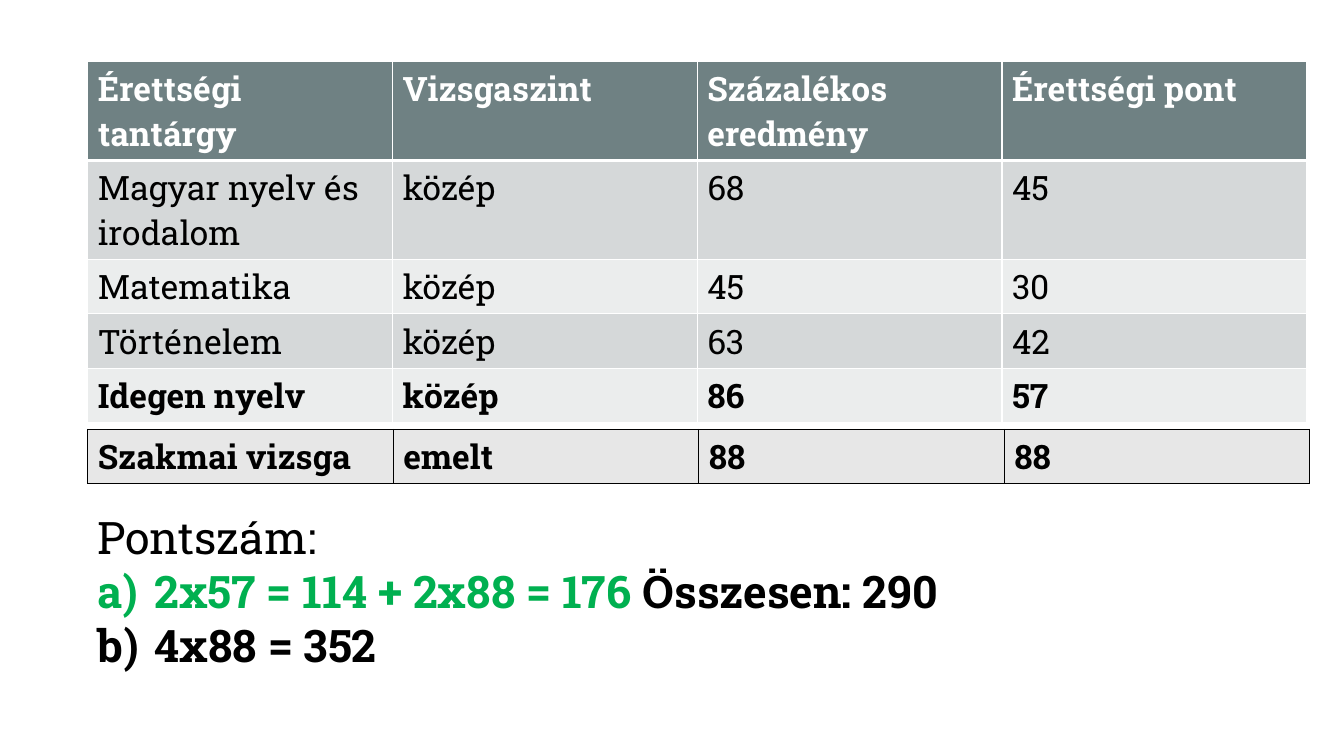
import pptx
import pptx.dml.color
import pptx.enum.text
import pptx.oxml
import pptx.oxml.ns
import pptx.util
from pptx.util import Cm

FONT = "Roboto Slab"
BLACK, WHITE, GREEN = "000000", "FFFFFF", "00B050"
HEADER_FILL, DARK_BAND, LIGHT_BAND, EXAM_FILL = "6F8183", "D5D8D9", "EBEDED", "E7E7E7"
LEFT = Cm(2.21)

SUBJECTS = [
    ("Érettségi tantárgy", "Vizsgaszint", "Százalékos eredmény", "Érettségi pont"),
    ("Magyar nyelv és irodalom", "közép", "68", "45"),
    ("Matematika", "közép", "45", "30"),
    ("Történelem", "közép", "63", "42"),
    ("Idegen nyelv", "közép", "86", "57"),
]
EXAM = [("Szakmai vizsga", "emelt", "88", "88")]


def color(value):
    return pptx.dml.color.RGBColor.from_string(value)


def set_font(font, ink, **formats):
    for name, value in {"name": FONT, **formats}.items():
        setattr(font, name, value)
    font.color.rgb = color(ink)


def xml(tag, attributes, content=""):
    return pptx.oxml.parse_xml(
        f'<a:{tag} {pptx.oxml.ns.nsdecls("a")} {attributes}>{content}</a:{tag}>')


def set_borders(cell, ink, bottom_width):
    properties = cell._tc.get_or_add_tcPr()
    widths = {"lnL": 1, "lnR": 1, "lnT": 1, "lnB": bottom_width}
    for place, (side, width) in enumerate(widths.items()):
        stroke = f'<a:solidFill><a:srgbClr val="{ink}"/></a:solidFill>'
        properties.insert(place, xml(side, f'w="{pptx.util.Pt(width)}"', stroke))


def add_score_table(slide, top, column_width, row_heights, rows, row_style):
    """row_style(index) gives fill, text colour, bold and bottom border width."""
    columns = len(rows[0])
    scores = slide.shapes.add_table(
        len(rows), columns, LEFT, top, column_width * columns, sum(row_heights)).table
    for column in scores.columns:
        column.width = column_width
    for index, (row, height) in enumerate(zip(rows, row_heights)):
        scores.rows[index].height = height
        fill, ink, bold, bottom_width = row_style(index)
        for position, text in enumerate(row):
            cell = scores.cell(index, position)
            cell.text = text
            set_font(cell.text_frame.paragraphs[0].runs[0].font, ink,
                     size=pptx.util.Pt(24), bold=bold)
            cell.fill.solid()
            cell.fill.fore_color.rgb = color(fill)
            border = BLACK if rows is EXAM else WHITE
            set_borders(cell, border, bottom_width)


def subject_style(index):
    if index == 0:
        return HEADER_FILL, WHITE, True, 3
    band = DARK_BAND if index % 2 else LIGHT_BAND
    return band, BLACK, index == len(SUBJECTS) - 1, 1


def exam_style(index):
    return EXAM_FILL, BLACK, True, 1


def add_line(paragraph, runs, bold, numbered):
    if numbered:
        properties = paragraph._p.get_or_add_pPr()
        properties.set("marL", str(Cm(1.43)))
        properties.set("indent", str(-Cm(1.43)))
        properties.append(xml("buFont", f'typeface="{FONT}"'))
        properties.append(xml("buAutoNum", 'type="alphaLcParenR"'))
    for text, ink in runs:
        run = paragraph.add_run()
        run.text = text
        set_font(run.font, ink, size=pptx.util.Pt(32), bold=bold)


def add_totals(slide):
    frame = slide.shapes.add_textbox(LEFT, Cm(12.73), Cm(25.58), Cm(4.37)).text_frame
    frame.word_wrap = True
    frame.auto_size = pptx.enum.text.MSO_AUTO_SIZE.SHAPE_TO_FIT_TEXT
    add_line(frame.paragraphs[0], [("Pontszám:", BLACK)], False, False)
    options = [
        [("2x57 = 114 + 2x88 = 176 ", GREEN), ("Összesen: 290", BLACK)],
        [("4x88 = 352", BLACK)],
    ]
    for runs in options:
        add_line(frame.add_paragraph(), runs, True, True)


def main():
    deck = pptx.Presentation()
    deck.slide_width, deck.slide_height = Cm(33.87), Cm(19.05)
    slide = deck.slides.add_slide(deck.slide_layouts[6])

    # School-leaving subjects
    single, double = Cm(1.27), Cm(2.27)
    add_score_table(slide, Cm(1.55), Cm(7.68), [double] * 2 + [single] * 3,
                    SUBJECTS, subject_style)

    # Vocational exam
    add_score_table(slide, Cm(10.82), Cm(7.7), [single], EXAM, exam_style)

    # Score calculation
    add_totals(slide)
    deck.save("out.pptx")


if __name__ == "__main__":
    main()
